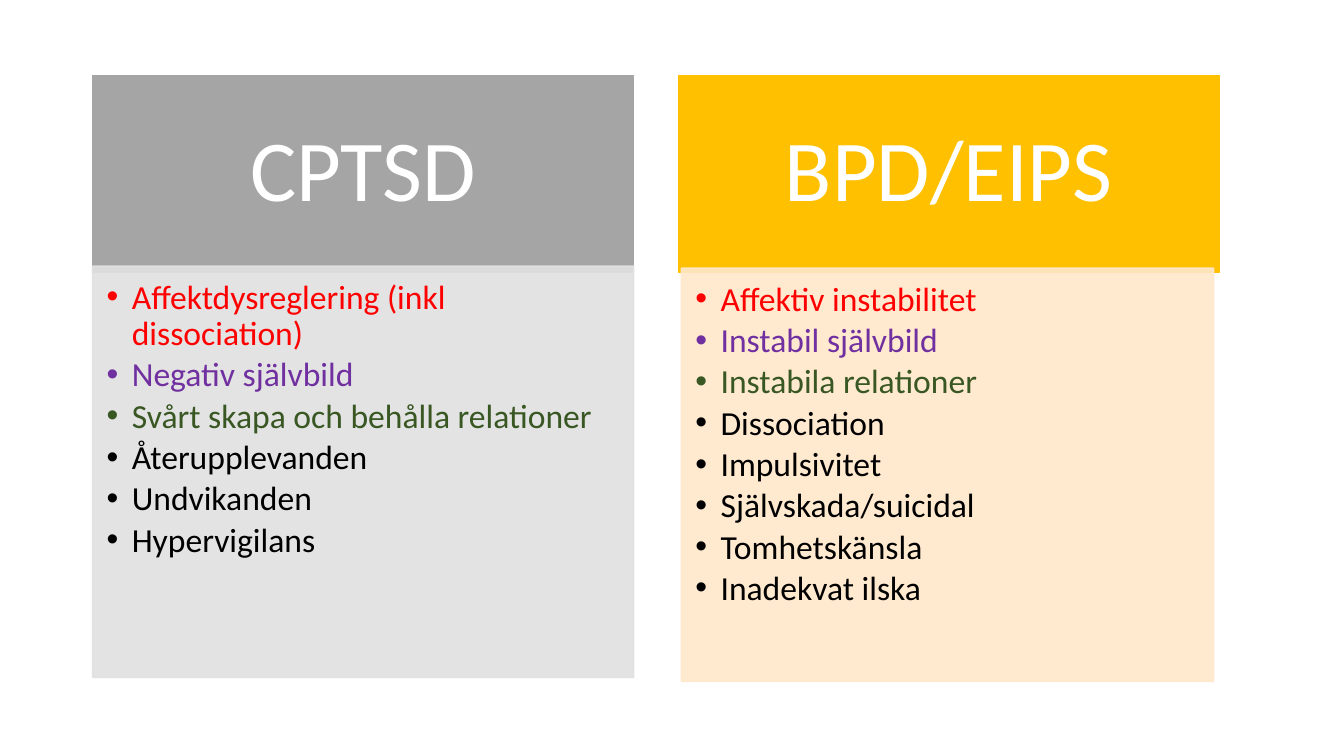
from dataclasses import dataclass

from lxml import etree
from pptx import Presentation
from pptx.dml.color import RGBColor
from pptx.enum import shapes, text
from pptx.oxml import ns
from pptx.util import Pt


@dataclass(frozen=True)
class Theme:
    """Colours, font and type sizes of the slide."""
    font: str = "Calibri"
    heading_size: int = 62
    symptom_size: int = 24
    white: str = "FFFFFF"
    black: str = "000000"
    affect: str = "FF0000"
    self_image: str = "7030A0"
    relations: str = "385723"
    grey: str = "A5A5A5"
    pale_grey: str = "E1E1E1"
    amber: str = "FFC000"
    pale_amber: str = "FFE8CB"


THEME = Theme()
SHARED_COLOURS = [THEME.affect, THEME.self_image, THEME.relations]
DIAGNOSES = [
    {
        "heading": "CPTSD",
        "colours": (THEME.grey, THEME.pale_grey),
        "heading_box": (66.2, 54, 386.6, 140.4),
        "symptom_box": (66.2, 190.1, 386.6, 293.8),
        "symptoms": [
            "Affektdysreglering (inkl dissociation)",
            "Negativ självbild",
            "Svårt skapa och behålla relationer",
            "Återupplevanden",
            "Undvikanden",
            "Hypervigilans",
        ],
    },
    {
        "heading": "BPD/EIPS",
        "colours": (THEME.amber, THEME.pale_amber),
        "heading_box": (484.6, 54, 386.6, 140.4),
        "symptom_box": (486.7, 191.5, 380.2, 295.2),
        "symptoms": [
            "Affektiv instabilitet",
            "Instabil självbild",
            "Instabila relationer",
            "Dissociation",
            "Impulsivitet",
            "Självskada/suicidal",
            "Tomhetskänsla",
            "Inadekvat ilska",
        ],
    },
]
HEADING_INSETS = (34.6, 20.2, 34.6, 20.2)
SYMPTOM_INSETS = (10, 10, 13.7, 15.1)
BULLET_INDENT = 18
SYMPTOM_OPACITY = 90


def add_panel(slide, box, colour, insets, anchor, opacity=100):
    """Add a filled rectangle and return its text frame."""
    panel = slide.shapes.add_shape(shapes.MSO_SHAPE.RECTANGLE, *map(Pt, box))
    panel.shadow.inherit = False
    panel.line.width = Pt(1)
    panel.fill.solid()
    for paint in (panel.fill, panel.line.fill):
        paint.solid()
        paint.fore_color.rgb = RGBColor.from_string(colour)
    if opacity < 100:
        for tint in panel._element.spPr.iter(ns.qn("a:srgbClr")):
            etree.SubElement(tint, ns.qn("a:alpha"), val=str(opacity * 1000))
    frame = panel.text_frame
    frame.word_wrap = True
    frame.vertical_anchor = anchor
    (frame.margin_left, frame.margin_top,
     frame.margin_right, frame.margin_bottom) = map(Pt, insets)
    return frame


def write(paragraph, words, size, colour, align, space_share):
    """Write one styled run with spacing relative to its size."""
    paragraph.alignment = align
    paragraph.line_spacing = 0.9
    paragraph.space_after = Pt(size * space_share)
    run = paragraph.add_run()
    run.text = words
    run.font.name = THEME.font
    run.font.size = Pt(size)
    run.font.color.rgb = RGBColor.from_string(colour)


def add_bullet(paragraph):
    """Give a paragraph a hanging round bullet."""
    properties = paragraph._p.get_or_add_pPr()
    properties.set("marL", str(Pt(BULLET_INDENT)))
    properties.set("indent", str(-Pt(BULLET_INDENT)))
    etree.SubElement(properties, ns.qn("a:buFont"), typeface="Arial")
    etree.SubElement(properties, ns.qn("a:buChar"), char="•")
    paragraph.level = 1


def add_diagnosis(slide, diagnosis):
    """Add the heading and symptom panels of one diagnosis."""
    strong, pale = diagnosis["colours"]
    heading = add_panel(slide, diagnosis["heading_box"], strong,
                        HEADING_INSETS, text.MSO_ANCHOR.MIDDLE)
    write(heading.paragraphs[0], diagnosis["heading"], THEME.heading_size,
          THEME.white, text.PP_ALIGN.CENTER, 0.35)
    symptoms = add_panel(slide, diagnosis["symptom_box"], pale,
                         SYMPTOM_INSETS, text.MSO_ANCHOR.TOP, SYMPTOM_OPACITY)
    for index, symptom in enumerate(diagnosis["symptoms"]):
        line = symptoms.add_paragraph() if index else symptoms.paragraphs[0]
        shared = index < len(SHARED_COLOURS)
        colour = SHARED_COLOURS[index] if shared else THEME.black
        add_bullet(line)
        write(line, symptom, THEME.symptom_size, colour,
              text.PP_ALIGN.LEFT, 0.15)


def main():
    """Build and save the comparison slide."""
    deck = Presentation()
    deck.slide_width, deck.slide_height = Pt(960), Pt(540)
    slide = deck.slides.add_slide(deck.slide_layouts[6])
    for diagnosis in DIAGNOSES:
        add_diagnosis(slide, diagnosis)
    deck.save("out.pptx")


if __name__ == "__main__":
    main()
